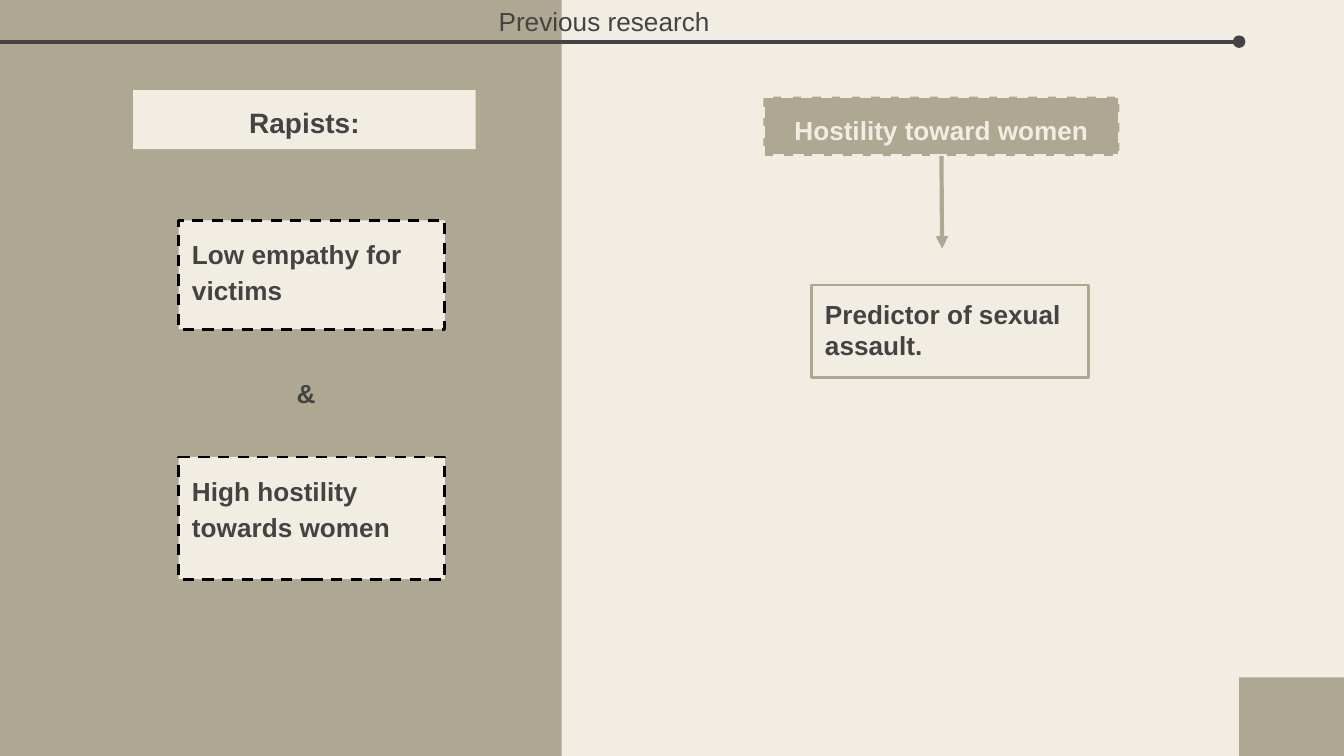
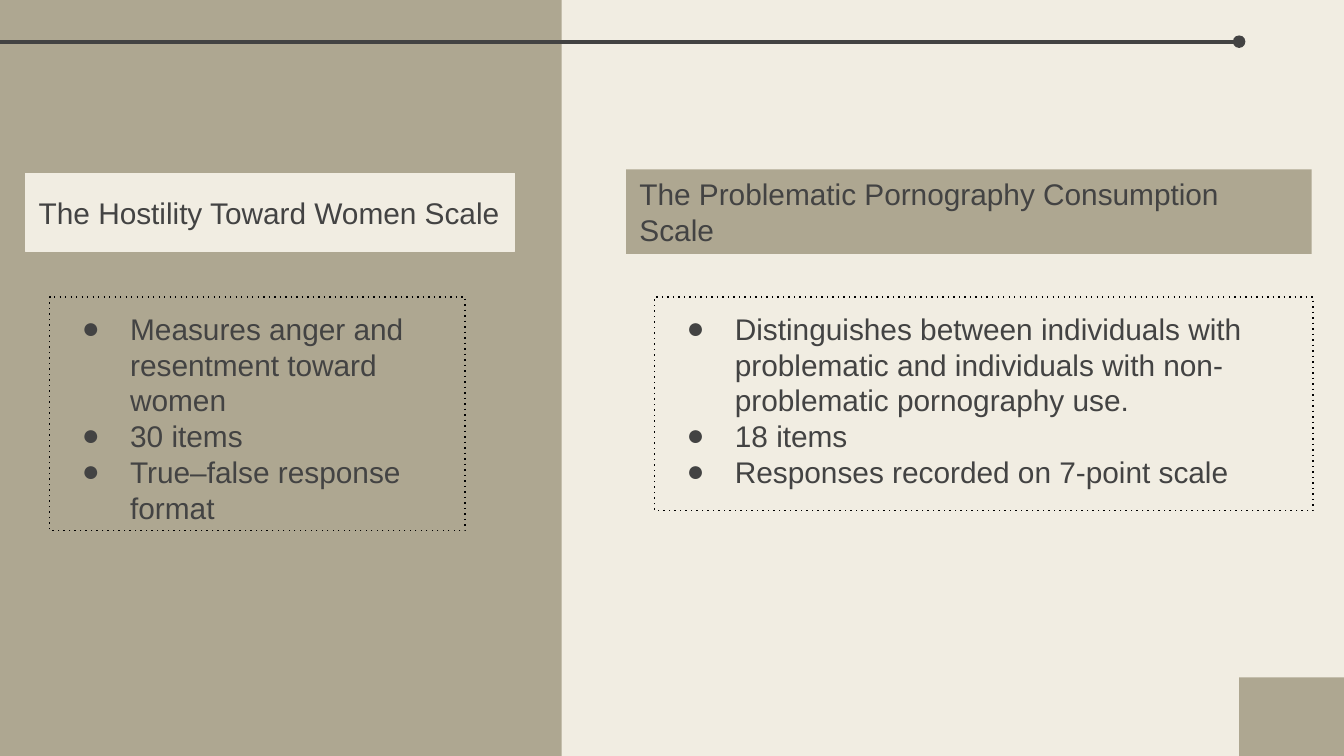
import pptx
import pptx.util
import pptx.dml.color
import pptx.enum.shapes
import pptx.enum.text
import pptx.oxml.ns
from lxml import etree

Inches, Pt = pptx.util.Inches, pptx.util.Pt
RGB = pptx.dml.color.RGBColor.from_string
ALIGN = pptx.enum.text.PP_ALIGN
ANCHOR = pptx.enum.text.MSO_ANCHOR
qn = pptx.oxml.ns.qn

COLORS = {"cream": "F1EDE2", "khaki": "AEA791", "ink": "434343", "black": "000000"}


def set_text(shape, lines, size, bold=False, color="ink", align=ALIGN.LEFT,
             anchor=ANCHOR.TOP, spacing=None, bullets=False):
    frame = shape.text_frame
    frame.word_wrap = True
    frame.auto_size = pptx.enum.text.MSO_AUTO_SIZE.NONE
    frame.vertical_anchor = anchor
    frame.margin_left = frame.margin_right = Inches(0.1)
    frame.margin_top = frame.margin_bottom = Inches(0.1)
    frame.text = "\n".join(lines)
    for paragraph in frame.paragraphs:
        paragraph.alignment = align
        paragraph.line_spacing = spacing
        if bullets:
            props = paragraph._p.get_or_add_pPr()
            props.set("marL", str(Inches(0.5)))
            props.set("indent", str(Inches(-0.36)))
            bullet_color = etree.SubElement(props, qn("a:buClr"))
            etree.SubElement(bullet_color, qn("a:srgbClr"), val=COLORS["ink"])
            etree.SubElement(props, qn("a:buFont"), typeface="Arial")
            etree.SubElement(props, qn("a:buChar"), char="●")
        font = paragraph.font
        font.name, font.size, font.bold = "Arial", Pt(size), bold
        font.color.rgb = RGB(COLORS[color])


def add_box(slide, at, fill=None, line=None, width=0.75, dash=None):
    """Add a rectangle; dash is a DrawingML preset dash name."""
    box = slide.shapes.add_shape(pptx.enum.shapes.MSO_SHAPE.RECTANGLE,
                                 *[Inches(value) for value in at])
    box.shadow.inherit = False
    if fill:
        box.fill.solid()
        box.fill.fore_color.rgb = RGB(COLORS[fill])
    else:
        box.fill.background()
    if line:
        box.line.color.rgb = RGB(COLORS[line])
        box.line.width = Pt(width)
        if dash:
            etree.SubElement(box.line._get_or_add_ln(), qn("a:prstDash"), val=dash)
    else:
        box.line.fill.background()
    return box


prs = pptx.Presentation()
prs.slide_width = Inches(10)
prs.slide_height = prs.slide_width * 9 // 16
page_height = prs.slide_height.inches
background = prs.slide_master.background.fill
background.solid()
background.fore_color.rgb = RGB(COLORS["cream"])

title_only, blank = prs.slide_layouts[5], prs.slide_layouts[6]
research = prs.slides.add_slide(title_only)
scales = prs.slides.add_slide(blank)

# Shared bands and rule
rules = []
for slide in (research, scales):
    add_box(slide, (9.22, 5.04, 0.78, page_height - 5.04), fill="khaki")
    add_box(slide, (0, 0, 4.18, page_height), fill="khaki")
    rules.append(slide.shapes.add_connector(
        pptx.enum.shapes.MSO_CONNECTOR.STRAIGHT,
        Inches(0), Inches(0.31), Inches(9.22), Inches(0.31)))

# Slide 1: previous research
rapists = add_box(research, (0.99, 0.67, 2.55, 0.44), fill="cream")
set_text(rapists, ["Rapists:"], 15, bold=True, align=ALIGN.CENTER,
         anchor=ANCHOR.MIDDLE, spacing=1.15)

for top, height, trait in ((1.64, 0.81, "Low empathy for victims"),
                           (3.4, 0.91, "High hostility towards women")):
    trait_box = add_box(research, (1.33, top, 1.98, height), "cream", "black", 1.5, "dash")
    set_text(trait_box, [trait], 14, bold=True, spacing=1.15)

ampersand = research.shapes.add_textbox(Inches(2.11), Inches(2.71), Inches(0.3), Inches(0.44))
set_text(ampersand, ["&"], 14, bold=True)

hostility = add_box(research, (5.68, 0.72, 2.65, 0.44), "khaki", "cream", 1.5, "dash")
set_text(hostility, ["Hostility toward women"], 14, bold=True, color="cream",
         align=ALIGN.CENTER, spacing=1.15)

prediction = research.shapes.add_connector(
    pptx.enum.shapes.MSO_CONNECTOR.STRAIGHT,
    Inches(7.01), Inches(1.16), Inches(7.01), Inches(1.85))
prediction.begin_connect(hostility, 2)

predictor = add_box(research, (6.04, 2.12, 2.06, 0.69), line="khaki", width=1.5)
set_text(predictor, ["Predictor of sexual assault."], 14, bold=True)

title = research.shapes.title
title.left, title.top = Inches(3.61), Inches(-0.06)
title.width, title.height = Inches(2.77), Inches(0.44)
set_text(title, ["Previous research"], 14)
research.shapes._spTree.append(title._element)  # in front of the band

# Slide 2: the two scales
hostility_scale = add_box(scales, (0.19, 1.29, 3.64, 0.58), "cream", "cream")
set_text(hostility_scale, ["The Hostility Toward Women Scale"], 16, anchor=ANCHOR.MIDDLE)
consumption_scale = add_box(scales, (4.66, 1.26, 5.1, 0.63), "khaki")
set_text(consumption_scale, ["The Problematic Pornography Consumption Scale"], 16,
         anchor=ANCHOR.MIDDLE)

scale_details = [
    ((0.37, 2.21, 3.09, 1.74),
     ["Measures anger and resentment toward women",
      "30 items",
      "True–false response format"]),
    ((4.87, 2.21, 4.9, 1.59),
     ["Distinguishes between individuals with problematic and individuals with "
      "non-problematic pornography use.",
      "18 items",
      "Responses recorded on 7-point scale"]),
]
for at, details in scale_details:
    details_box = add_box(scales, at, line="black", dash="dot")
    set_text(details_box, details, 16, bullets=True)

# Line ends
for connector, color, end in [(rule, "ink", "oval") for rule in rules] + [
        (prediction, "khaki", "triangle")]:
    connector.line.color.rgb = RGB(COLORS[color])
    connector.line.width = Pt(2.25)
    etree.SubElement(connector.line._get_or_add_ln(), qn("a:tailEnd"), type=end)
    etree.SubElement(connector._element.spPr, qn("a:effectLst"))

prs.save("out.pptx")
